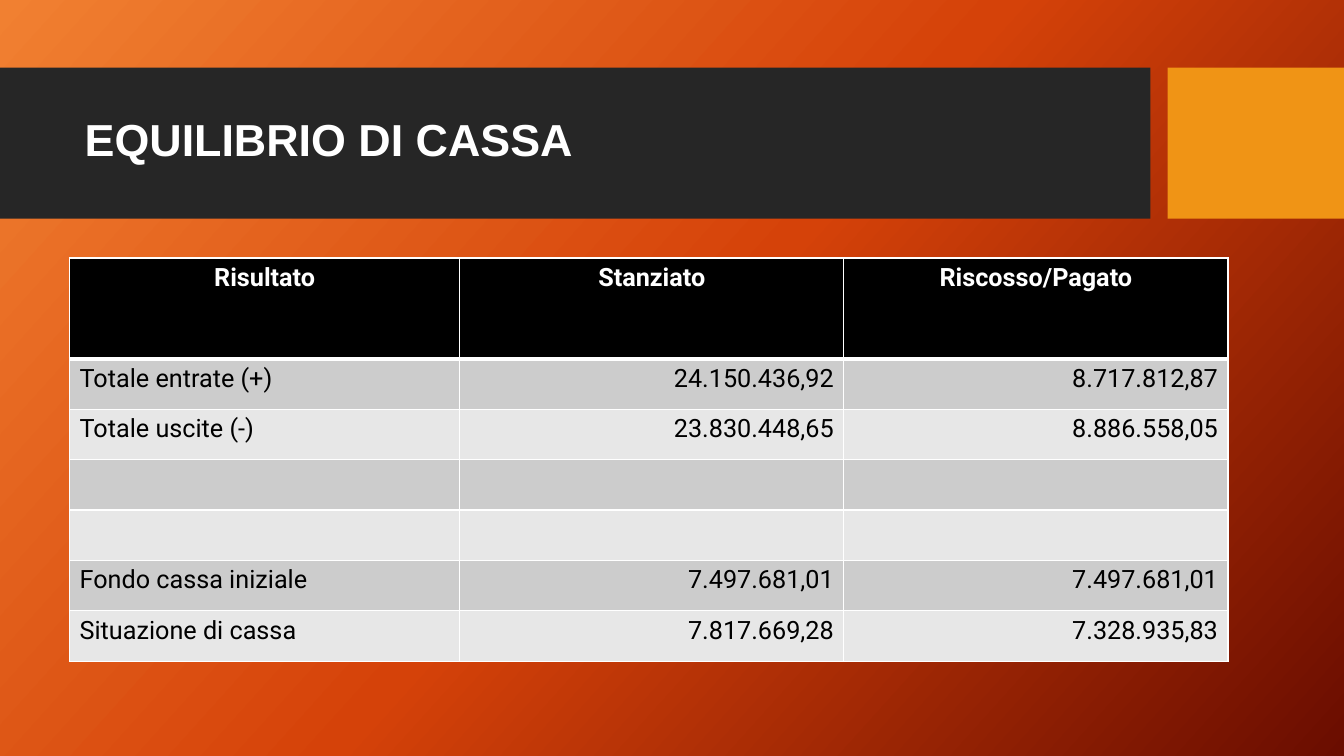
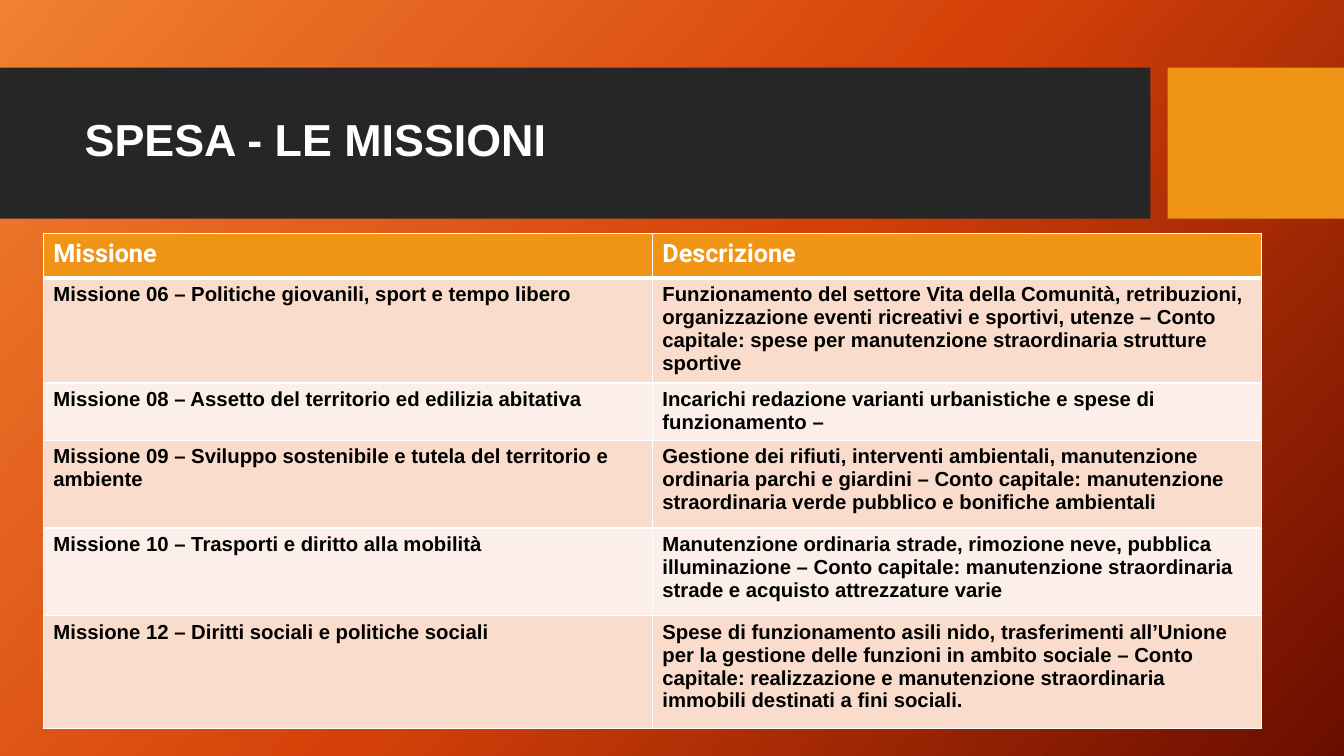
from copy import deepcopy
from dataclasses import dataclass

from lxml import etree
from pptx import Presentation
from pptx.dml.color import RGBColor
from pptx.enum.shapes import MSO_SHAPE
from pptx.enum.text import MSO_ANCHOR, PP_ALIGN
from pptx.oxml.ns import qn
from pptx.util import Inches, Pt

RECTANGLE = MSO_SHAPE.RECTANGLE
MIDDLE = MSO_ANCHOR.MIDDLE
LEFT, CENTER, RIGHT = PP_ALIGN.LEFT, PP_ALIGN.CENTER, PP_ALIGN.RIGHT
TITLE_ONLY = 5


@dataclass(frozen=True)
class Theme:
    gradient: tuple = ((0, "F18031"), (0.5, "D54209"), (1, "6A0D00"))
    gradient_angle: int = 42
    band: str = "262626"
    accent: str = "F09415"
    white: str = "FFFFFF"
    black: str = "000000"
    gray_rows: tuple = ("CCCCCC", "E7E7E7")
    peach_rows: tuple = ("F9DCCC", "FCEEE8")
    heading_font: str = "Arial"
    table_font: str = "Roboto"
    title_size: float = 32
    table_size: float = 18
    mission_size: float = 14.5
    border: float = 1
    header_border: float = 3


THEME = Theme()

# Content
BANDS = [((0, 0.67, 11.41, 1.5), THEME.band), ((11.58, 0.67, 1.75, 1.5), THEME.accent)]
TITLE_BOX = (0.74, 0.82, 10.51, 1.18)

SLIDES = [
    {
        "title": "EQUILIBRIO DI CASSA",
        "origin": (0.69, 2.56),
        "columns": [3.87, 3.81, 3.81],
        "heights": [1] + [0.5] * 6,
        "header_fill": THEME.black,
        "header_align": [CENTER] * 3,
        "row_fills": THEME.gray_rows,
        "body_align": [LEFT, RIGHT, RIGHT],
        "body_format": {"size": THEME.table_size, "font": THEME.table_font},
        "rows": [
            ("Risultato", "Stanziato", "Riscosso/Pagato"),
            ("Totale entrate (+)", "24.150.436,92", "8.717.812,87"),
            ("Totale uscite (-)", "23.830.448,65", "8.886.558,05"),
            ("", "", ""),
            ("", "", ""),
            ("Fondo cassa iniziale", "7.497.681,01", "7.497.681,01"),
            ("Situazione di cassa", "7.817.669,28", "7.328.935,83"),
        ],
    },
    {
        "title": "SPESA - LE MISSIONI",
        "origin": (0.43, 2.32),
        "columns": [6.04, 6.04],
        "heights": [0.44, 1.04, 0.57, 0.87, 0.87, 1.12],
        "header_fill": THEME.accent,
        "header_align": [LEFT] * 2,
        "row_fills": THEME.peach_rows,
        "body_align": [LEFT] * 2,
        "body_format": {"size": THEME.mission_size, "font": THEME.heading_font, "bold": True},
        "rows": [
            ("Missione", "Descrizione"),
            ("Missione 06 – Politiche giovanili, sport e tempo libero",
             "Funzionamento del settore Vita della Comunità, retribuzioni, organizzazione "
             "eventi ricreativi e sportivi, utenze – Conto capitale: spese per manutenzione "
             "straordinaria strutture sportive"),
            ("Missione 08 – Assetto del territorio ed edilizia abitativa",
             "Incarichi redazione varianti urbanistiche e spese di funzionamento –"),
            ("Missione 09 – Sviluppo sostenibile e tutela del territorio e ambiente",
             "Gestione dei rifiuti, interventi ambientali, manutenzione ordinaria parchi e "
             "giardini – Conto capitale: manutenzione straordinaria verde pubblico e "
             "bonifiche ambientali"),
            ("Missione 10 – Trasporti e diritto alla mobilità",
             "Manutenzione ordinaria strade, rimozione neve, pubblica illuminazione – Conto "
             "capitale: manutenzione straordinaria strade e acquisto attrezzature varie"),
            ("Missione 12 – Diritti sociali e politiche sociali",
             "Spese di funzionamento asili nido, trasferimenti all’Unione per la gestione "
             "delle funzioni in ambito sociale – Conto capitale: realizzazione e "
             "manutenzione straordinaria immobili destinati a fini sociali."),
        ],
    },
]


def put_text(frame, text, *, size, font, color=THEME.black, bold=False, align=LEFT, spacing=None):
    para = frame.paragraphs[0]
    para.alignment = align
    para.line_spacing = spacing
    span = para.add_run()
    span.text = text
    span.font.size = Pt(size)
    span.font.name = font
    span.font.bold = bold
    span.font.color.rgb = RGBColor.from_string(color)


# Shared look: background, title place and bands
def paint_background(master):
    fill = master.background.fill
    fill.gradient()
    fill.gradient_angle = 360 - THEME.gradient_angle
    stop_list = master.element.find(".//" + qn("p:bg") + "//" + qn("a:gsLst"))
    stop_list.append(deepcopy(stop_list[0]))
    for stop, (position, color) in zip(fill.gradient_stops, THEME.gradient):
        stop.position = position
        stop.color.rgb = RGBColor.from_string(color)


def place_title(layout):
    title = next(iter(layout.placeholders))
    title.left, title.top, title.width, title.height = map(Inches, TITLE_BOX)
    title.text_frame.vertical_anchor = MIDDLE


def add_bands(layout, slide):
    # Shapes are drawn on a slide, then moved behind the layout's placeholders
    for index, (place, color) in enumerate(BANDS, start=2):
        band = slide.shapes.add_shape(RECTANGLE, *map(Inches, place))
        band.shadow.inherit = False
        band.fill.solid()
        band.fill.fore_color.rgb = RGBColor.from_string(color)
        band.line.fill.background()
        layout.shapes.element.insert(index, band.element)


# Tables
def style_cell(cell, fill, row_index):
    widths = {"lnL": THEME.border, "lnR": THEME.border,
              "lnT": THEME.header_border if row_index == 1 else THEME.border,
              "lnB": THEME.header_border if row_index == 0 else THEME.border}
    properties = cell._tc.get_or_add_tcPr()
    for side, width in widths.items():
        line = etree.SubElement(properties, qn("a:" + side), w=str(Pt(width)))
        solid = etree.SubElement(line, qn("a:solidFill"))
        etree.SubElement(solid, qn("a:srgbClr"), val=THEME.white)
    cell.fill.solid()
    cell.fill.fore_color.rgb = RGBColor.from_string(fill)


def add_table(slide, content):
    rows, columns, heights = content["rows"], content["columns"], content["heights"]
    place = (*content["origin"], sum(columns), sum(heights))
    table = slide.shapes.add_table(len(rows), len(columns), *map(Inches, place)).table
    for column, width in zip(table.columns, columns):
        column.width = Inches(width)
    for row, height in zip(table.rows, heights):
        row.height = Inches(height)

    header_format = {"size": THEME.table_size, "font": THEME.table_font,
                     "color": THEME.white, "bold": True}
    for row_index, texts in enumerate(rows):
        if row_index == 0:
            fill, aligns, text_format = content["header_fill"], content["header_align"], header_format
        else:
            fill = content["row_fills"][(row_index - 1) % 2]
            aligns, text_format = content["body_align"], content["body_format"]
        for column_index, (text, align) in enumerate(zip(texts, aligns)):
            cell = table.cell(row_index, column_index)
            style_cell(cell, fill, row_index)
            if text:
                put_text(cell.text_frame, text, align=align, **text_format)


def main():
    deck = Presentation()
    deck.slide_width, deck.slide_height = Inches(13.33), Inches(7.5)
    layout = deck.slide_layouts[TITLE_ONLY]
    paint_background(deck.slide_master)
    place_title(layout)

    for content in SLIDES:
        slide = deck.slides.add_slide(layout)
        put_text(slide.shapes.title.text_frame, content["title"], size=THEME.title_size,
                 font=THEME.heading_font, color=THEME.white, bold=True, spacing=0.9)
        add_table(slide, content)
    add_bands(layout, deck.slides[0])
    deck.save("out.pptx")


if __name__ == "__main__":
    main()
